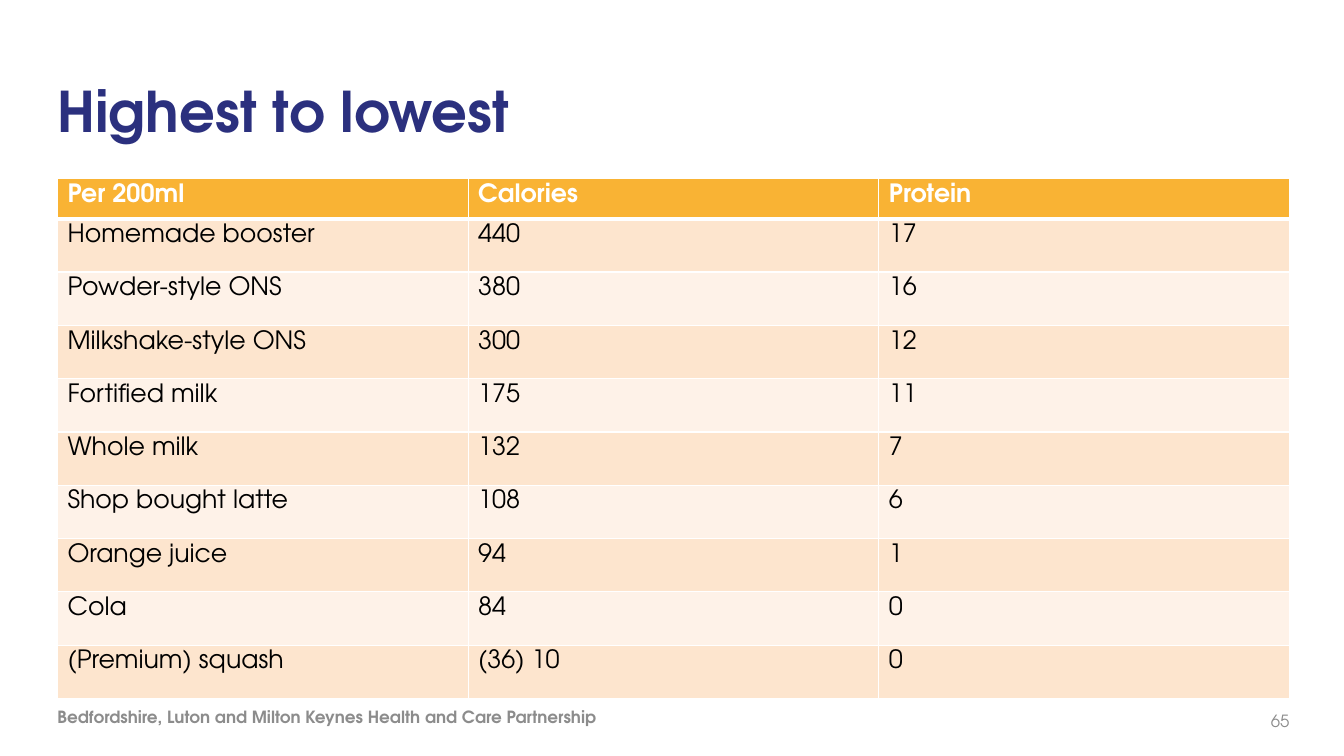
from lxml import etree
from pptx import Presentation
from pptx import util as u
from pptx.dml.color import RGBColor
from pptx.enum import text
from pptx.oxml import ns

NAVY = RGBColor(0x2B, 0x30, 0x7E)
GOLD = RGBColor(0xF9, 0xB3, 0x34)
PEACH = RGBColor(0xFD, 0xE5, 0xCE)
CREAM = RGBColor(0xFE, 0xF2, 0xE8)
GREY = RGBColor(0x8C, 0x8C, 0x8C)
WHITE = RGBColor(0xFF, 0xFF, 0xFF)
BLACK = RGBColor(0, 0, 0)
FACE = "TeX Gyre Adventor"
LEFT, WIDTH = 0.57, 12.22
HEAD = 0.39
DRINKS = [
    ("Per 200ml", "Calories", "Protein"),
    ("Homemade booster", "440", "17"),
    ("Powder-style ONS", "380", "16"),
    ("Milkshake-style ONS", "300", "12"),
    ("Fortified milk", "175", "11"),
    ("Whole milk", "132", "7"),
    ("Shop bought latte", "108", "6"),
    ("Orange juice", "94", "1"),
    ("Cola", "84", "0"),
    ("(Premium) squash", "(36) 10", "0"),
]


def style(par, size, color, bold):
    """Set the font of a whole paragraph."""
    font = par.font
    font.name, font.size, font.bold = FACE, u.Pt(size), bold
    font.color.rgb = color


def label(slide, box, words, size, color, bold=True, align=text.PP_ALIGN.LEFT):
    """Place one line of text, centred vertically in its box."""
    frame = slide.shapes.add_textbox(*map(u.Inches, box)).text_frame
    frame.word_wrap = True
    frame.vertical_anchor = text.MSO_ANCHOR.MIDDLE
    frame.margin_left = frame.margin_right = 0
    frame.margin_top = frame.margin_bottom = 0
    par = frame.paragraphs[0]
    par.text, par.alignment = words, align
    style(par, size, color, bold)


def edge(cell, side, width):
    """Draw a white border on one side of a cell."""
    line = etree.Element(ns.qn("a:ln" + side), w=str(u.Pt(width)))
    fill = etree.SubElement(line, ns.qn("a:solidFill"))
    etree.SubElement(fill, ns.qn("a:srgbClr"), val=str(WHITE))
    cell._tc.get_or_add_tcPr().append(line)


def grid(slide, box, rows):
    """Fill the box with a banded table under a header row."""
    count = len(rows[0])
    table = slide.shapes.add_table(len(rows), count, *map(u.Inches, box)).table
    body = (box[3] - HEAD) / (len(rows) - 1)
    for col in table.columns:
        col.width = u.Inches(box[2] / count)
    for r, row in enumerate(rows):
        top = r == 0
        table.rows[r].height = u.Inches(HEAD if top else body)
        for c, words in enumerate(row):
            cell = table.cell(r, c)
            for side in "LRTB":
                thick = (top and side == "B") or (r == 1 and side == "T")
                edge(cell, side, 3 if thick else 1)
            cell.fill.solid()
            cell.fill.fore_color.rgb = GOLD if top else PEACH if r % 2 else CREAM
            cell.text = words
            style(cell.text_frame.paragraphs[0], 18, WHITE if top else BLACK, top)


def main():
    """Build the slide and save it."""
    deck = Presentation()
    deck.slide_width, deck.slide_height = u.Inches(13.33), u.Inches(7.5)
    slide = deck.slides.add_slide(deck.slide_layouts[6])
    label(slide, (LEFT, 0.42, 9.64, 1.35), "Highest to lowest", 40, NAVY)
    grid(slide, (LEFT, 1.77, WIDTH, 5.15), DRINKS)
    label(slide, (LEFT, 6.91, 8.1, 0.4),
          "Bedfordshire, Luton and Milton Keynes Health and Care Partnership", 12, GREY)
    label(slide, (LEFT + WIDTH - 0.53, 6.95, 0.53, 0.4), "65", 12, GREY,
          False, text.PP_ALIGN.RIGHT)
    deck.save("out.pptx")


if __name__ == "__main__":
    main()
